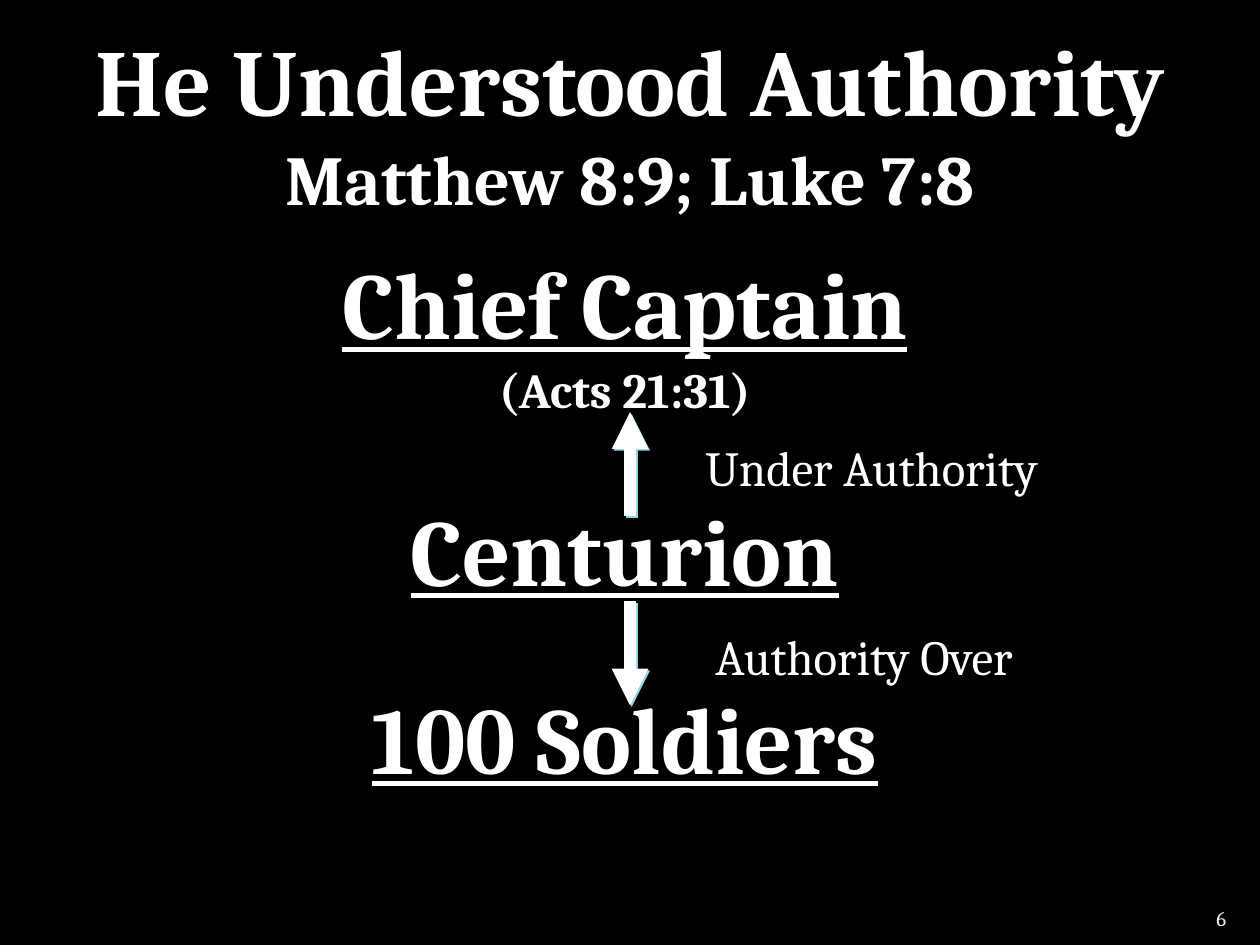
from dataclasses import dataclass

from lxml.etree import SubElement
from pptx import Presentation
from pptx.dml.color import RGBColor as Rgb
from pptx.enum.shapes import MSO_CONNECTOR as Link
from pptx.enum.text import MSO_ANCHOR as Anchor, MSO_AUTO_SIZE as Fit, PP_ALIGN as Align
from pptx.oxml import parse_xml
from pptx.oxml.ns import nsdecls, qn
from pptx.slide import Slide
from pptx.util import Cm, Pt


@dataclass(frozen=True)
class Theme:
    font: str = "Cambria"
    background: str = "000000"
    ink: str = "FFFFFF"
    arrow_shadow: str = "94D7E4"
    number_stops: tuple = ((0, "9E9E9E"), (28, "EDEDED"), (100, "FFFFFF"))
    heading: int = 54
    subtitle: int = 40
    label: int = 28
    number: int = 12
    arrow: int = 7


@dataclass(frozen=True)
class Line:
    text: str
    size: int
    bold: bool = False
    underline: bool = False
    before: float = 0
    same_paragraph: bool = False


@dataclass(frozen=True)
class Block:
    left: float
    top: float
    width: float
    height: float
    lines: tuple
    align: Align = Align.CENTER
    anchor: Anchor = Anchor.TOP
    spacing: float = 1.0
    wrap: bool = True


@dataclass(frozen=True)
class Arrow:
    x: float
    start: float
    end: float


THEME = Theme()
RANK_GAP = 49

TITLE = Block(1.27, 0.3, 22.86, 4.27, (
    Line("He Understood Authority", THEME.heading, bold=True),
    Line("Matthew 8:9; Luke 7:8", THEME.subtitle, bold=True, same_paragraph=True),
), anchor=Anchor.MIDDLE)
RANKS = Block(1.7, 5.08, 21.79, 11.23, (
    Line("Chief Captain", THEME.heading, True, True),
    Line("(Acts 21:31)", THEME.label, True, before=3.3),
    Line("Centurion", THEME.heading, True, True, RANK_GAP),
    Line("100 Soldiers", THEME.heading, True, True, RANK_GAP),
), spacing=0.9)
UNDER = Block(13.97, 8.69, 7.49, 1.45, (Line("Under Authority", THEME.label),),
              align=Align.LEFT, wrap=False)
OVER = Block(14.17, 12.5, 6.88, 1.45, (Line("Authority Over", THEME.label),),
             align=Align.LEFT, wrap=False)
NUMBER = Block(19.05, 17.98, 5.92, 1.07, (Line("6", THEME.number),),
               align=Align.RIGHT, anchor=Anchor.MIDDLE)
ARROWS = (Arrow(12.7, 12.12, 14.22), Arrow(12.7, 10.41, 8.31))


def apply(target: object, values: dict) -> None:
    for name, value in values.items():
        setattr(target, name, value)


def draw_block(slide: Slide, block: Block) -> list:
    box = slide.shapes.add_textbox(
        Cm(block.left), Cm(block.top), Cm(block.width), Cm(block.height))
    frame = box.text_frame
    apply(frame, {
        "word_wrap": block.wrap,
        "auto_size": Fit.NONE if block.wrap else Fit.SHAPE_TO_FIT_TEXT,
        "vertical_anchor": block.anchor,
    })
    runs = []
    paragraph = frame.paragraphs[0]
    for line in block.lines:
        if line.same_paragraph:
            paragraph.add_line_break()
        else:
            paragraph = frame.add_paragraph() if runs else paragraph
            apply(paragraph, {
                "alignment": block.align,
                "line_spacing": block.spacing,
                "space_before": Pt(line.before),
            })
        run = paragraph.add_run()
        run.text = line.text
        apply(run.font, {
            "name": THEME.font,
            "size": Pt(line.size),
            "bold": line.bold,
            "underline": line.underline,
        })
        run.font.color.rgb = Rgb.from_string(THEME.ink)
        runs.append(run)
    return runs


def shade_number(run) -> None:
    stops = "".join(
        f'<a:gs pos="{position * 1000}"><a:srgbClr val="{color}"/></a:gs>'
        for position, color in THEME.number_stops)
    gradient = parse_xml(
        f'<a:gradFill {nsdecls("a")}><a:gsLst>{stops}</a:gsLst>'
        '<a:lin ang="5400000" scaled="0"/></a:gradFill>')
    properties = run._r.get_or_add_rPr()
    properties.replace(properties.find(qn("a:solidFill")), gradient)


def draw_arrow(slide: Slide, arrow: Arrow) -> None:
    connector = slide.shapes.add_connector(
        Link.STRAIGHT, Cm(arrow.x), Cm(arrow.start), Cm(arrow.x), Cm(arrow.end))
    connector.line.width = Pt(THEME.arrow)
    connector.line.color.rgb = Rgb.from_string(THEME.ink)
    SubElement(connector.line._get_or_add_ln(), qn("a:tailEnd"), type="triangle")
    effects = SubElement(connector._element.spPr, qn("a:effectLst"))
    shadow = SubElement(effects, qn("a:outerShdw"), dist=str(Pt(1.4)),
                        dir="2700000", algn="ctr", rotWithShape="0")
    SubElement(shadow, qn("a:srgbClr"), val=THEME.arrow_shadow)


def main() -> None:
    deck = Presentation()
    apply(deck, {"slide_width": Cm(25.4), "slide_height": Cm(19.05)})
    slide = deck.slides.add_slide(deck.slide_layouts[6])
    backdrop = slide.background.fill
    backdrop.solid()
    backdrop.fore_color.rgb = Rgb.from_string(THEME.background)

    for block in (TITLE, RANKS):
        draw_block(slide, block)
    shade_number(draw_block(slide, NUMBER)[0])
    for arrow in ARROWS:
        draw_arrow(slide, arrow)
    for block in (UNDER, OVER):
        draw_block(slide, block)
    deck.save("out.pptx")


if __name__ == "__main__":
    main()
